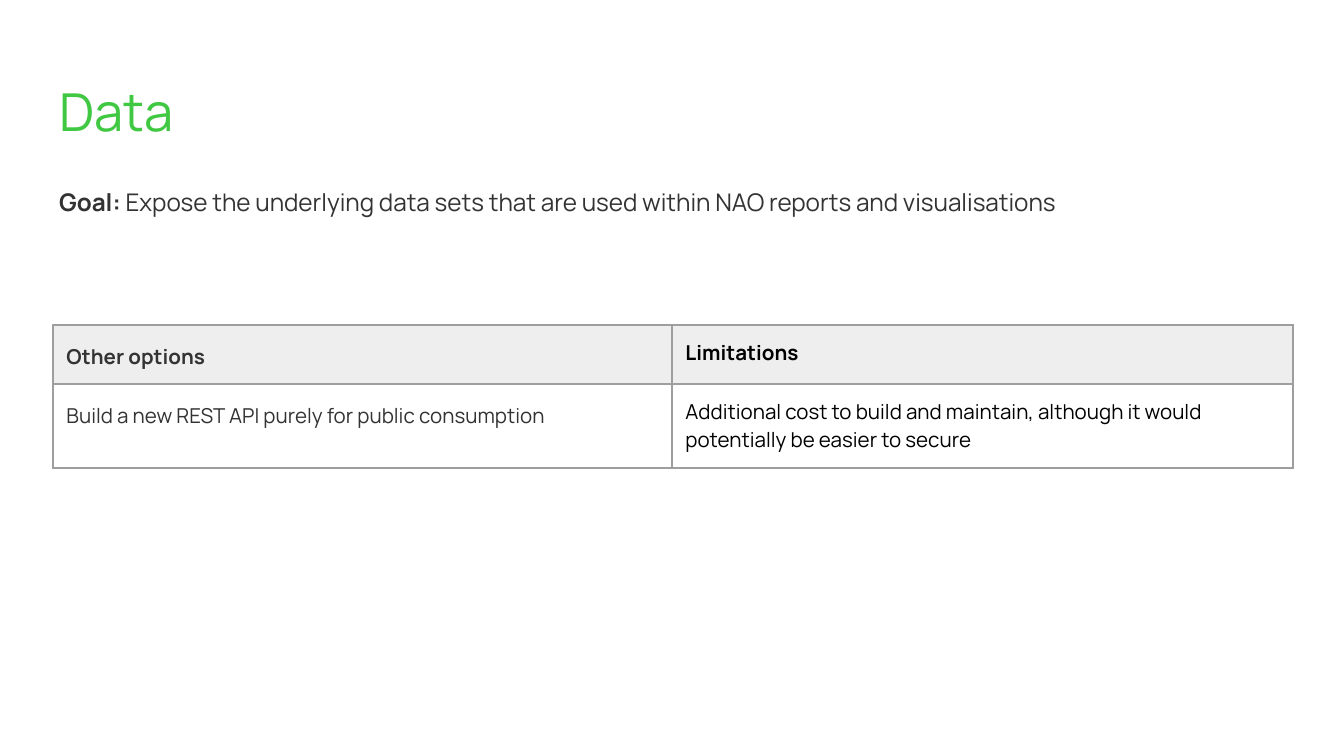
"""Build the Data slide: a goal statement and a table of other options."""
from dataclasses import dataclass

import lxml.etree
import pptx
import pptx.dml.color
import pptx.enum.text
import pptx.oxml.ns
import pptx.util

EMU_PER_PX = 914400 / 134.4


@dataclass(frozen=True)
class Theme:
    font: str = "Manrope"
    title_color: str = "40C842"
    body_color: str = "333333"
    limitation_color: str = "000000"
    header_fill: str = "EEEEEE"
    border_color: str = "9E9E9E"
    border_pt: float = 0.75
    title_pt: int = 28
    goal_pt: int = 13
    table_pt: int = 11
    spacing: float = 1.15


THEME = Theme()


def px(length):
    return pptx.util.Emu(round(length * EMU_PER_PX))


def rgb(color):
    return pptx.dml.color.RGBColor.from_string(color)


def add_run(paragraph, text, size, color, bold=False):
    run = paragraph.add_run()
    run.text = text
    run.font.name = THEME.font
    run.font.size = pptx.util.Pt(size)
    run.font.color.rgb = rgb(color)
    run.font.bold = bold


def set_margins(holder):
    holder.margin_left = holder.margin_right = pptx.util.Inches(0.1)
    holder.margin_top = holder.margin_bottom = pptx.util.Inches(0.1)


def add_text_box(slide, left, top, width, height):
    frame = slide.shapes.add_textbox(px(left), px(top), px(width), px(height)).text_frame
    frame.word_wrap = True
    frame.vertical_anchor = pptx.enum.text.MSO_ANCHOR.TOP
    set_margins(frame)
    return frame.paragraphs[0]


def set_borders(cell):
    properties = cell._tc.get_or_add_tcPr()
    qn = pptx.oxml.ns.qn
    for side in ("a:lnL", "a:lnR", "a:lnT", "a:lnB"):
        line = lxml.etree.SubElement(properties, qn(side), w=str(pptx.util.Pt(THEME.border_pt)))
        fill = lxml.etree.SubElement(line, qn("a:solidFill"))
        lxml.etree.SubElement(fill, qn("a:srgbClr"), val=THEME.border_color)


def fill_cell(cell, text, is_header, is_option):
    set_margins(cell)
    set_borders(cell)
    if is_header:
        cell.fill.solid()
        cell.fill.fore_color.rgb = rgb(THEME.header_fill)
    else:
        cell.fill.background()
    paragraph = cell.text_frame.paragraphs[0]
    if is_option:
        paragraph.line_spacing = THEME.spacing
        paragraph.space_after = pptx.util.Pt(16)
    color = THEME.body_color if is_option else THEME.limitation_color
    add_run(paragraph, text, THEME.table_pt, color, bold=is_header)


def add_options_table(slide, left, top, widths, heights, rows):
    table = slide.shapes.add_table(
        len(rows), len(widths), px(left), px(top), px(sum(widths)), px(sum(heights))
    ).table
    table.first_row = table.horz_banding = False
    for column, width in zip(table.columns, widths):
        column.width = px(width)
    for row, height in zip(table.rows, heights):
        row.height = px(height)
    for r, texts in enumerate(rows):
        for c, text in enumerate(texts):
            fill_cell(table.cell(r, c), text, is_header=r == 0, is_option=c == 0)


def main():
    presentation = pptx.Presentation()
    presentation.slide_width, presentation.slide_height = px(1344), px(756)
    slide = presentation.slides.add_slide(presentation.slide_layouts[6])

    title = add_text_box(slide, 46, 66, 1253, 84)
    add_run(title, "Data", THEME.title_pt, THEME.title_color)

    goal = add_text_box(slide, 46, 169, 1253, 503)
    goal.line_spacing = THEME.spacing
    add_run(goal, "Goal: ", THEME.goal_pt, THEME.body_color, bold=True)
    add_run(
        goal,
        "Expose the underlying data sets that are used within NAO reports and visualisations",
        THEME.goal_pt,
        THEME.body_color,
    )

    add_options_table(slide, 53, 325, (619, 621), (59, 84), (
        ("Other options", "Limitations"),
        (
            "Build a new REST API purely for public consumption",
            "Additional cost to build and maintain, although it would "
            "potentially be easier to secure",
        ),
    ))
    presentation.save("out.pptx")


if __name__ == "__main__":
    main()
